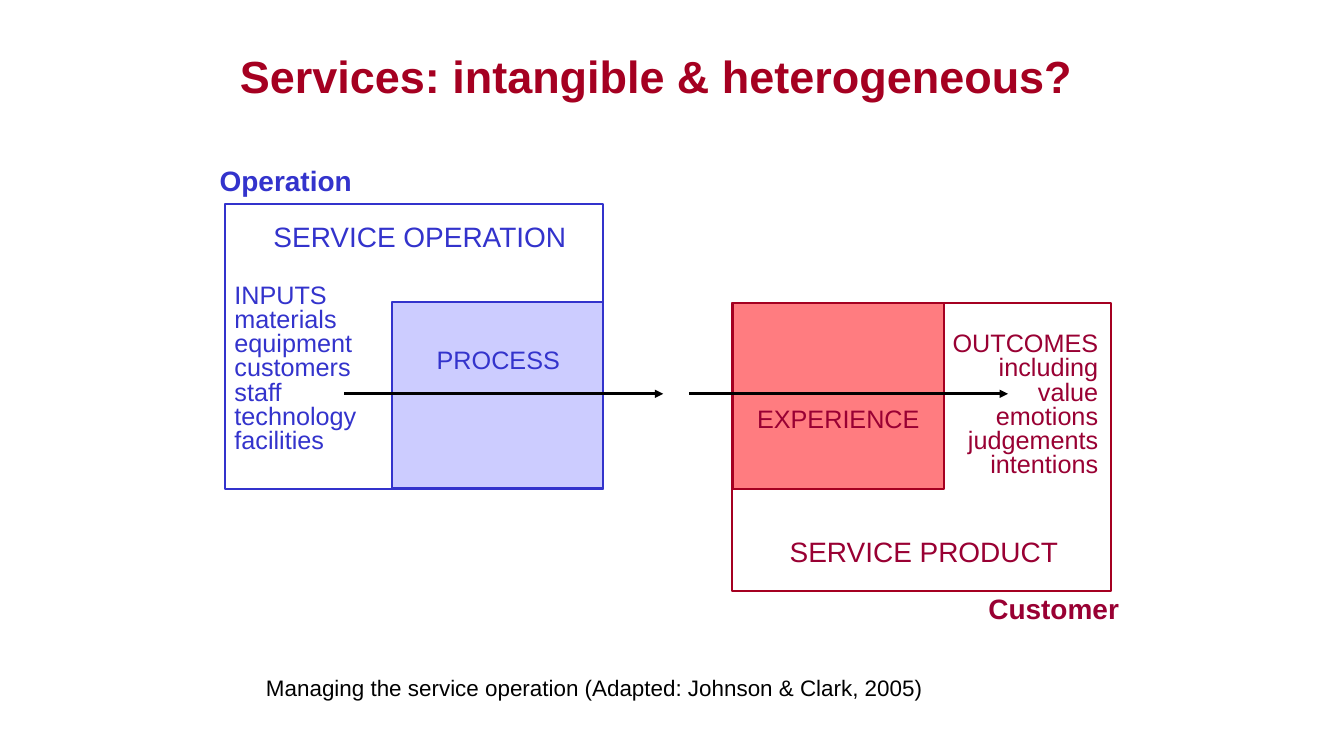
"""Build the slide on service operation and service product."""
from lxml import etree
from pptx import Presentation
from pptx.dml.color import RGBColor
from pptx.enum.shapes import MSO_CONNECTOR, MSO_SHAPE
from pptx.enum.text import MSO_ANCHOR, PP_ALIGN
from pptx.oxml.ns import qn
from pptx.util import Inches, Pt

LEFT, MID, RIGHT = PP_ALIGN.LEFT, PP_ALIGN.CENTER, PP_ALIGN.RIGHT
TOP, MIDDLE = MSO_ANCHOR.TOP, MSO_ANCHOR.MIDDLE
RECT, LINE = MSO_SHAPE.RECTANGLE, MSO_CONNECTOR.STRAIGHT
FONT = "Arial"
COLORS = {
    "blue": "3333CC", "pale": "CCCCFF", "red": "A50021",
    "pink": "FF7C80", "wine": "990033", "black": "000000",
}

INPUTS = ["INPUTS", "materials", "equipment", "customers", "staff",
          "technology", "facilities"]
OUTCOMES = ["OUTCOMES", "including", "value", "emotions", "judgements",
            "intentions"]

BOXES = [
    ((3.35, 3.03, 5.63, 4.25), None, "blue"),
    ((5.84, 4.5, 3.14, 2.77), "pale", "blue"),
    ((10.91, 4.51, 3.14, 2.77), "pink", "red"),
    ((10.9, 4.51, 5.64, 4.28), None, "red"),
]
ARROWS = [5.12, 10.25]
ARROW_Y, ARROW_W = 5.86, 4.75

TEXTS = [
    (["Services: intangible & heterogeneous?"], (2.53, 0.48, 14.48, 1.3),
     48.2, "red", True, MID, 1, MIDDLE),
    (["Operation"], (3.17, 2.38, 5.25, 0.61), 30, "blue", True, LEFT, 1, TOP),
    (["SERVICE OPERATION"], (2.81, 3.28, 6.88, 0.96),
     30, "blue", False, MID, 0.9, TOP),
    (INPUTS, (3.39, 4.19, 2.75, 3.01), 27, "blue", False, LEFT, 0.8, TOP),
    (["PROCESS"], (6.04, 5.18, 2.75, 0.44),
     27, "blue", False, MID, 0.75, TOP),
    (["EXPERIENCE"], (10.6, 6.06, 3.75, 0.44),
     27, "wine", False, MID, 0.75, TOP),
    (OUTCOMES, (13.25, 4.91, 3.19, 2.31), 27, "wine", False, RIGHT, 0.8, TOP),
    (["SERVICE PRODUCT"], (10.75, 7.9, 6, 0.61),
     30, "wine", False, MID, 1, TOP),
    (["Customer"], (11.5, 8.76, 5.25, 0.61), 30, "wine", True, RIGHT, 1, TOP),
    (["Managing the service operation (Adapted: Johnson & Clark, 2005)"],
     (3.86, 9.98, 13.35, 0.91), 24, "black", False, LEFT, 1, TOP),
]


def color(name):
    return RGBColor.from_string(COLORS[name])


def add_box(slide, place, fill, edge):
    box = slide.shapes.add_shape(RECT, *map(Inches, place))
    box.shadow.inherit = False
    if fill:
        box.fill.solid()
        box.fill.fore_color.rgb = color(fill)
    else:
        box.fill.background()
    box.line.color.rgb = color(edge)
    box.line.width = Pt(2.25)


def add_arrow(slide, left):
    ends = (left, ARROW_Y, left + ARROW_W, ARROW_Y)
    arrow = slide.shapes.add_connector(LINE, *map(Inches, ends))
    arrow.line.color.rgb = color("black")
    arrow.line.width = Pt(3)
    etree.SubElement(arrow.line._get_or_add_ln(), qn("a:tailEnd"),
                     type="triangle")
    etree.SubElement(arrow._element.spPr, qn("a:effectLst"))


def add_text(slide, lines, place, size, ink, bold, align, gap, anchor):
    frame = slide.shapes.add_textbox(*map(Inches, place)).text_frame
    frame.word_wrap = True
    frame.vertical_anchor = anchor
    frame.text = "\n".join(lines)
    for para in frame.paragraphs:
        para.alignment = align
        para.line_spacing = float(gap)
        para.font.name = FONT
        para.font.size = Pt(size)
        para.font.bold = bold
        para.font.color.rgb = color(ink)


def main():
    deck = Presentation()
    deck.slide_width, deck.slide_height = Inches(20), Inches(11.25)
    slide = deck.slides.add_slide(deck.slide_layouts[6])
    for box in BOXES:
        add_box(slide, *box)
    for left in ARROWS:
        add_arrow(slide, left)
    for text in TEXTS:
        add_text(slide, *text)
    deck.save("out.pptx")


if __name__ == "__main__":
    main()
